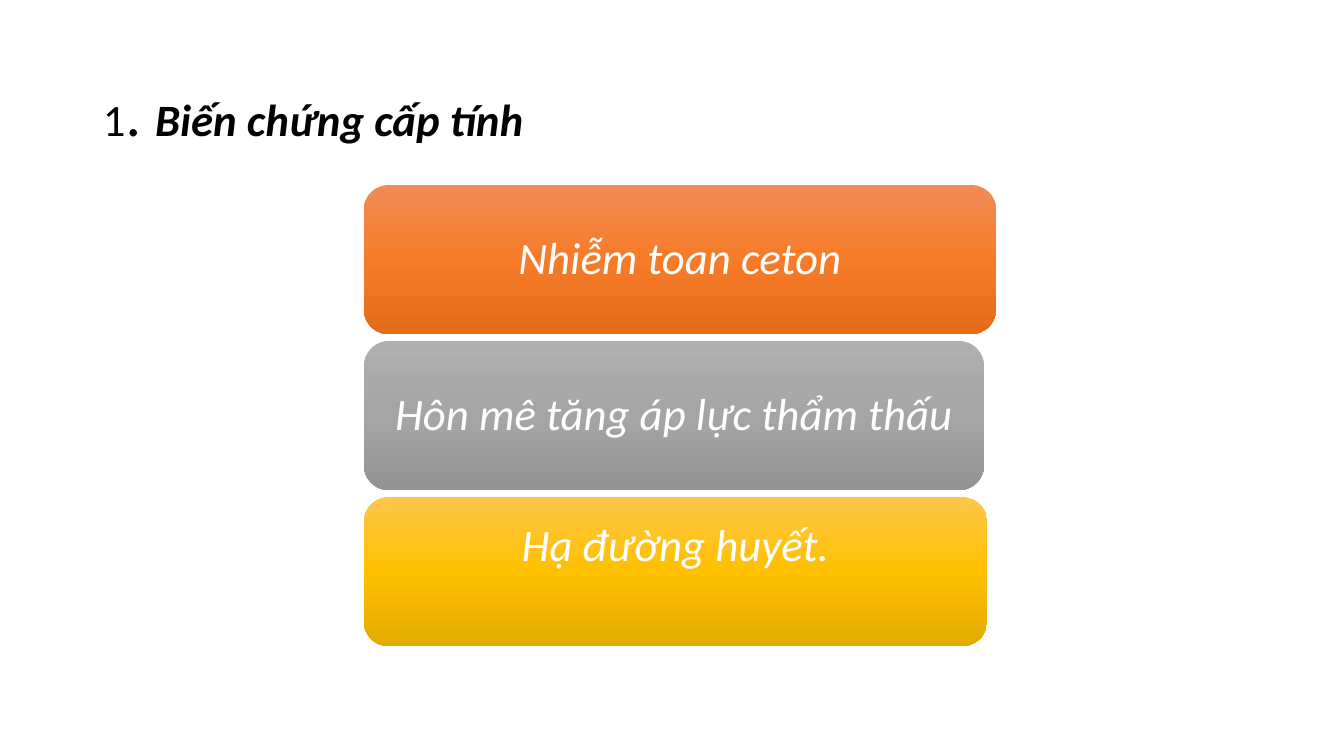
from copy import deepcopy

from pptx import Presentation
from pptx.dml.color import RGBColor
from pptx.enum.shapes import MSO_SHAPE
from pptx.enum.text import MSO_ANCHOR, PP_ALIGN
from pptx.oxml.ns import qn
from pptx.util import Pt

ROUND = MSO_SHAPE.ROUNDED_RECTANGLE
TOP, MIDDLE = MSO_ANCHOR.TOP, MSO_ANCHOR.MIDDLE
CENTER = PP_ALIGN.CENTER

SCALE = 914400 / 100.8
FONT = "Calibri"
COLORS = {
    "ink": "000000",
    "white": "FFFFFF",
    "orange": ("F18C57", "F67B28", "E56C19"),
    "gray": ("AFAFAF", "A5A5A5", "939393"),
    "gold": ("FFC64B", "FFC000", "E3AB00"),
}
# Text, width, gradient, anchor, top inset
CARDS = [
    ("Nhiễm toan ceton", 632, "orange", MIDDLE, 7),
    ("Hôn mê tăng áp lực thẩm thấu", 620, "gray", MIDDLE, 7),
    ("Hạ đường huyết.", 623, "gold", TOP, 18),
]
LEFT, FIRST, HEIGHT, PITCH = 364, 185, 149, 156


def px(n):
    return round(n * SCALE)


def style(run, size, color, bold=False, italic=False):
    font = run.font
    font.name, font.size = FONT, Pt(size)
    font.bold, font.italic = bold, italic
    font.color.rgb = RGBColor.from_string(COLORS[color])


def shade(shape, hues):
    """Fill from top to bottom with evenly spaced colour stops."""
    fill = shape.fill
    fill.gradient()
    fill.gradient_angle = 270
    stops = shape._element.spPr.find(qn("a:gradFill")).find(qn("a:gsLst"))
    stops.insert(1, deepcopy(stops[0]))
    for i, (stop, hue) in enumerate(zip(fill.gradient_stops, hues)):
        stop.position = i / (len(hues) - 1)
        stop.color.rgb = RGBColor.from_string(hue)


def add_title(slide):
    box = slide.shapes.add_textbox(px(93), px(70), px(1159), px(146))
    frame = box.text_frame
    frame.word_wrap = True
    frame.vertical_anchor = TOP
    frame.margin_top = px(13)
    para = frame.paragraphs[0]
    para.line_spacing = 0.9
    parts = [("1", 32, False, False), (". ", 44, False, False),
             ("Biến chứng cấp tính", 32, True, True)]
    for text, size, bold, italic in parts:
        run = para.add_run()
        run.text = text
        style(run, size, "ink", bold, italic)


def add_card(slide, top, text, width, hue, anchor, inset):
    card = slide.shapes.add_shape(ROUND, px(LEFT), px(top), px(width), px(HEIGHT))
    card.shadow.inherit = False
    card.line.fill.background()
    shade(card, COLORS[hue])
    frame = card.text_frame
    frame.text = text
    frame.word_wrap = True
    frame.vertical_anchor = anchor
    frame.margin_left = frame.margin_right = px(13)
    frame.margin_top, frame.margin_bottom = px(inset), px(7)
    para = frame.paragraphs[0]
    para.alignment = CENTER
    para.line_spacing = 0.9
    style(para.runs[0], 32, "white", italic=True)


def main():
    deck = Presentation()
    deck.slide_width, deck.slide_height = px(1344), px(756)
    slide = deck.slides.add_slide(deck.slide_layouts[6])
    add_title(slide)
    for i, card in enumerate(CARDS):
        add_card(slide, FIRST + i * PITCH, *card)
    deck.save("out.pptx")


if __name__ == "__main__":
    main()
